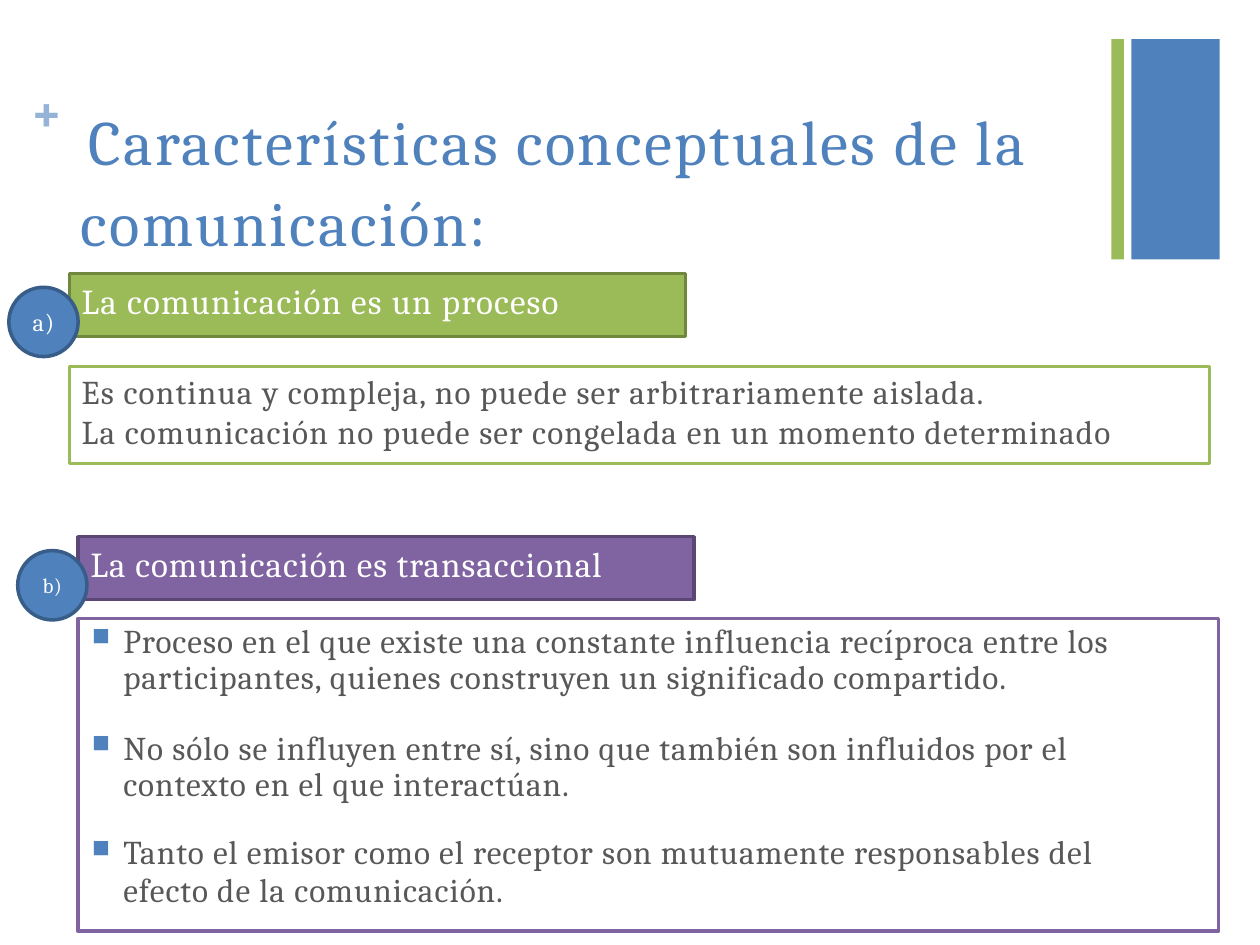
import pptx
import pptx.util
import pptx.dml.color
import pptx.enum.shapes
import pptx.enum.text
import lxml.etree

Inches, Pt = pptx.util.Inches, pptx.util.Pt
SHAPE = pptx.enum.shapes.MSO_SHAPE
ALIGN = pptx.enum.text.PP_ALIGN
ANCHOR = pptx.enum.text.MSO_ANCHOR
BLUE, GREEN, PURPLE = "4F81BC", "9BBA58", "8063A1"
WHITE, GREY = "FFFFFF", "585858"


def rgb(color):
    return pptx.dml.color.RGBColor.from_string(color)


def add_shape(s, kind, left, top, width, height, fill=None, line=None):
    sp = s.shapes.add_shape(kind, Inches(left), Inches(top), Inches(width), Inches(height))
    sp.shadow.inherit = False
    if fill:
        sp.fill.solid()
        sp.fill.fore_color.rgb = rgb(fill)
    else:
        sp.fill.background()
    if line:
        sp.line.color.rgb = rgb(line)
        sp.line.width = Pt(2)
    else:
        sp.line.fill.background()
    return sp


def set_frame(tf, left=0, top=0, right=0, anchor=ANCHOR.TOP):
    tf.word_wrap = True
    tf.auto_size = pptx.enum.text.MSO_AUTO_SIZE.NONE
    tf.vertical_anchor = anchor
    tf.margin_left, tf.margin_top = Inches(left), Inches(top)
    tf.margin_right, tf.margin_bottom = Inches(right), 0


def format_run(r, size, color, spacing):
    """Style a run; spacing is the gap between letters in points."""
    r.font.name = "Cambria"
    r.font.size = Pt(size)
    r.font.color.rgb = rgb(color)
    r.font.bold = False
    r.font._element.set("spc", str(round(spacing * 100)))


def set_indent(p, left, first):
    pPr = p._p.get_or_add_pPr()
    pPr.set("marL", str(Inches(left)))
    pPr.set("indent", str(Inches(first)))
    return pPr


def add_bullet(p):
    pPr = set_indent(p, 0.26, -0.25)
    ns = pptx.oxml.ns.qn
    color = lxml.etree.SubElement(pPr, ns("a:buClr"))
    lxml.etree.SubElement(color, ns("a:srgbClr"), val=BLUE)
    lxml.etree.SubElement(pPr, ns("a:buSzPct"), val="74000")
    lxml.etree.SubElement(pPr, ns("a:buChar"), char="■")


def write_paragraphs(tf, lines, size, color, spacing, align=ALIGN.LEFT):
    tf.text = "\n".join(lines)
    for p in tf.paragraphs:
        p.alignment = align
        format_run(p.runs[0], size, color, spacing)


def add_title(s):
    sp = s.shapes.title
    sp.left, sp.top, sp.width, sp.height = map(Inches, (0.2, 0.55, 8.36, 1.23))
    tf = sp.text_frame
    set_frame(tf, top=0.01)
    p = tf.paragraphs[0]
    p.alignment = ALIGN.LEFT
    p.space_before = Pt(1)
    set_indent(p, 0.44, -0.4)
    plus, title = p.add_run(), p.add_run()
    plus.text = "+ "
    format_run(plus, 54, "94B3D6", 4)
    plus.font.bold = True
    plus.font._element.set("baseline", "36000")
    title.text = "Características conceptuales de la comunicación:"
    format_run(title, 36, BLUE, 1.4)


def add_heading(s, left, top, text, spacing, fill, line):
    sp = add_shape(s, SHAPE.RECTANGLE, left, top, 4.89, 0.5, fill, line)
    set_frame(sp.text_frame, 0.1, 0.05)
    write_paragraphs(sp.text_frame, [text], 20, WHITE, spacing)


def add_body(s, left, top, height, lines, spacing, line):
    sp = add_shape(s, SHAPE.RECTANGLE, left, top, 9.05, height, line=line)
    tf = sp.text_frame
    set_frame(tf, 0.1, 0.04, 0.42)
    write_paragraphs(tf, lines, 19, GREY, spacing)
    tf.paragraphs[0].space_before = Pt(3.1)
    return tf


def add_badge(s, left, top, text, size):
    """Add the lettered circle that overlaps the left end of a heading."""
    sp = add_shape(s, SHAPE.OVAL, left - 0.48, top + 0.11, 0.55, 0.55, BLUE, "385D89")
    set_frame(sp.text_frame, anchor=ANCHOR.MIDDLE)
    write_paragraphs(sp.text_frame, [text], size, WHITE, 0.3, ALIGN.CENTER)


def main():
    prs = pptx.Presentation()
    prs.slide_width, prs.slide_height = Inches(10), Inches(7.5)
    s = prs.slides.add_slide(prs.slide_layouts[5])
    add_title(s)
    add_shape(s, SHAPE.RECTANGLE, 8.98, 0.31, 0.7, 1.75, BLUE)
    add_shape(s, SHAPE.RECTANGLE, 8.82, 0.31, 0.1, 1.75, GREEN)

    left, top = 0.55, 2.17
    add_heading(s, left, top, "La comunicación es un proceso", 0.7, GREEN, "70883E")
    add_body(s, left, 2.91, 0.77, [
        "Es continua y compleja, no puede ser arbitrariamente aislada.",
        "La comunicación no puede ser congelada en un momento determinado",
    ], 0.7, GREEN)
    add_badge(s, left, top, "a)", 14)

    left, top = 0.62, 4.26
    add_heading(s, left, top, "La comunicación es transaccional", 0.6, PURPLE, "5C4676")
    tf = add_body(s, left, 4.91, 2.48, [
        "Proceso en el que existe una constante influencia recíproca entre los "
        "participantes, quienes construyen un significado compartido.",
        "No sólo se influyen entre sí, sino que también son influidos por el "
        "contexto en el que interactúan.",
        "Tanto el emisor como el receptor son mutuamente responsables del "
        "efecto de la comunicación.",
    ], 0.6, PURPLE)
    for p, pitch, before in zip(tf.paragraphs, (20.6, 20.6, 21.6), (3.5, 20, 17.5)):
        p.line_spacing = Pt(pitch)
        p.space_before = Pt(before)
        add_bullet(p)
    add_badge(s, left, top, "b)", 12)

    prs.save("out.pptx")


if __name__ == "__main__":
    main()
